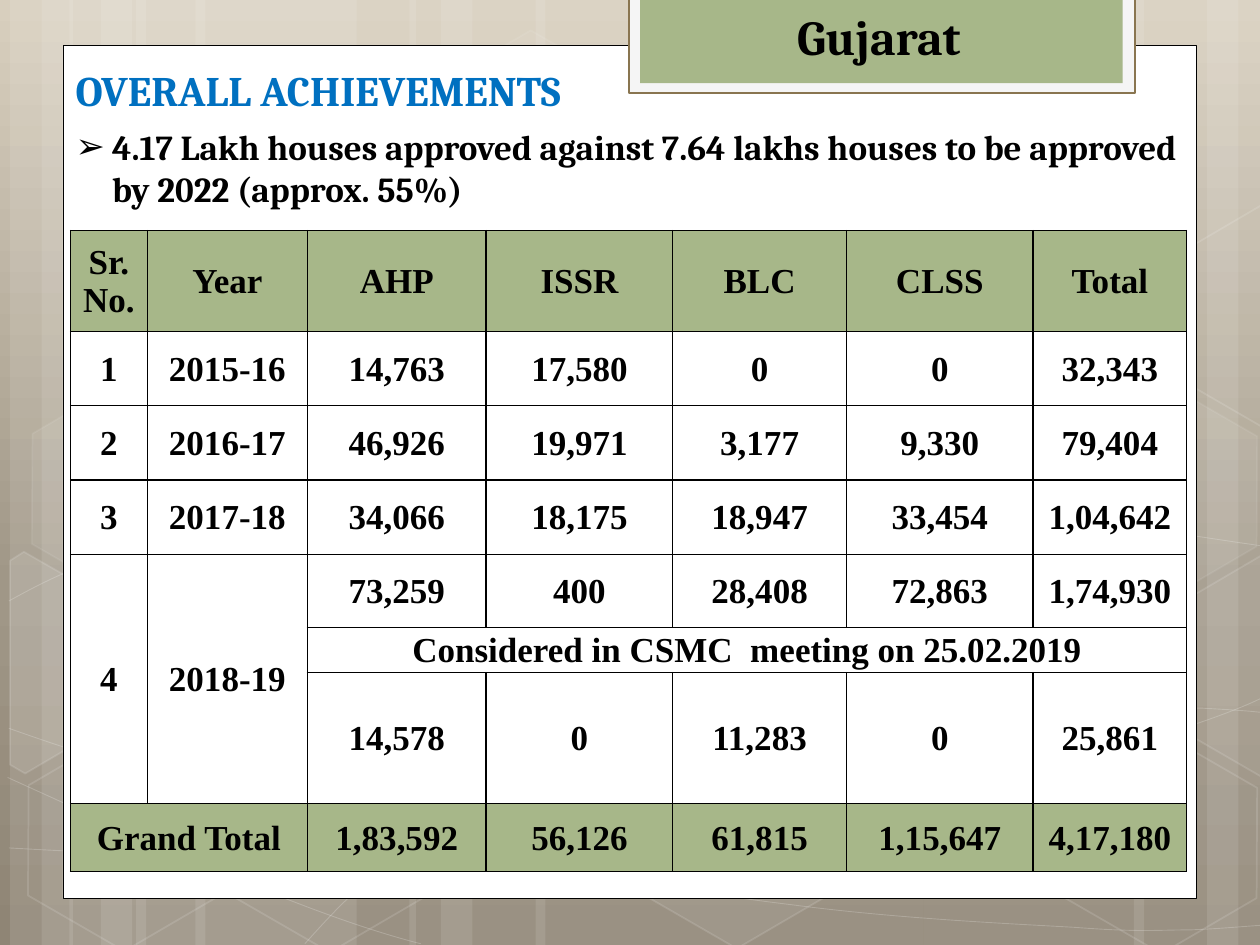
from copy import deepcopy

from lxml import etree
from pptx import Presentation
from pptx.dml.color import RGBColor
from pptx.enum.shapes import MSO_SHAPE as Shape
from pptx.enum.text import MSO_ANCHOR as Anchor, MSO_AUTO_SIZE as AutoSize, PP_ALIGN as Align
from pptx.oxml.ns import qn
from pptx.util import Inches, Pt

WHITE = RGBColor(0xFF, 0xFF, 0xFF)
BLACK = RGBColor(0x00, 0x00, 0x00)
BLUE = RGBColor(0x00, 0x70, 0xC0)
GREEN = RGBColor(0xA7, 0xB7, 0x89)
BROWN = RGBColor(0x89, 0x75, 0x50)
OFF_WHITE = RGBColor(0xF5, 0xF5, 0xF5)
BACKGROUND_STOPS = [
    (0, RGBColor(0xD8, 0xCF, 0xBE)),
    (0.62, RGBColor(0xA0, 0x97, 0x87)),
    (1, RGBColor(0x8F, 0x85, 0x75)),
]


def style(shape, fill=None, line=None, width=1, fill_alpha=100, line_alpha=100):
    """Set fill and line, with opacity in percent; None means no paint."""
    shape.shadow.inherit = False
    for paint, color, alpha in ((shape.fill, fill, fill_alpha), (shape.line.fill, line, line_alpha)):
        if color is None:
            paint.background()
            continue
        paint.solid()
        paint.fore_color.rgb = color
        if alpha < 100:
            solid = shape._element.spPr.find(qn("a:solidFill") if paint is shape.fill
                                             else qn("a:ln") + "/" + qn("a:solidFill"))
            etree.SubElement(solid[0], qn("a:alpha"), val=str(alpha * 1000))
    if line is not None:
        shape.line.width = Pt(width)


def add_outline(points, close):
    builder = slide.shapes.build_freeform(Inches(points[0][0]), Inches(points[0][1]))
    builder.add_line_segments([(Inches(x), Inches(y)) for x, y in points[1:]], close=close)
    return builder.convert_to_shape()


presentation = Presentation()
presentation.slide_width = Inches(10)
presentation.slide_height = Inches(7.5)
slide = presentation.slides.add_slide(presentation.slide_layouts[1])

# Background gradient, light at the top
background_fill = slide.background.fill
background_fill.gradient()
background_fill.gradient_angle = 270
stop_list = slide._element.find(".//" + qn("a:gsLst"))
stop_list.insert(1, deepcopy(stop_list[0]))
for stop, (position, color) in zip(background_fill.gradient_stops, BACKGROUND_STOPS):
    stop.position = position
    stop.color.rgb = color

# Translucent vertical bands: left, width
bands = [
    (1.08, 1.75), (0.08, 0.5), (0.33, 0.83), (1.55, 1.75), (0.55, 0.5), (0.8, 0.83),
    (7.33, 1.75), (9.58, 0.5), (9, 0.83), (4.25, 3.08), (3.25, 0.5), (3.5, 0.83),
]
for left, width in bands:
    band = slide.shapes.add_shape(Shape.RECTANGLE, Inches(left), 0, Inches(width), Inches(7.5))
    style(band, WHITE, fill_alpha=10)

# Sweeping curves: a start point, then three points for each Bezier piece
curves = [
    [(0.07, 6.73), (0.61, 6.76), (1.15, 6.79), (1.9, 6.78), (2.65, 6.77), (3.58, 6.75), (4.58, 6.65),
     (5.58, 6.55), (7, 6.36), (7.92, 6.17), (8.83, 5.98), (9.77, 5.68), (10.07, 5.51)],
    [(0.07, 4.77), (0.36, 4.61), (0.65, 4.46), (1.21, 4.31), (1.78, 4.16), (2.59, 3.94), (3.47, 3.87),
     (4.36, 3.8), (5.44, 3.79), (6.54, 3.87), (7.64, 3.95), (9.47, 4.26), (10.07, 4.34)],
    [(0.06, 6.17), (1.27, 6.72), (2.47, 7.27), (3.34, 7.49)],
    [(0.07, 5.78), (0.38, 5.89), (0.7, 6), (1.28, 6.16), (1.86, 6.31), (2.73, 6.56), (3.57, 6.73),
     (4.4, 6.9), (5.45, 7.08), (6.28, 7.18), (7.11, 7.29), (8, 7.33), (8.53, 7.36),
     (9.05, 7.4), (9.19, 7.38), (9.45, 7.38), (9.71, 7.37), (9.89, 7.35), (10.07, 7.34)],
    [(2.42, 7.49), (2.6, 7.29), (2.78, 7.09), (3.02, 6.91), (3.26, 6.73), (3.6, 6.53), (3.88, 6.39),
     (4.16, 6.25), (4.33, 6.19), (4.7, 6.09), (5.06, 5.99), (5.73, 5.85), (6.08, 5.78),
     (6.44, 5.71), (6.49, 5.71), (6.8, 5.69), (7.11, 5.66), (7.6, 5.63), (7.94, 5.62),
     (8.29, 5.61), (8.86, 5.62), (8.86, 5.62), (9.08, 5.62), (9.31, 5.62), (9.53, 5.62),
     (9.71, 5.63), (9.88, 5.64), (9.97, 5.65), (10.06, 5.66), (10.03, 5.65), (10.06, 5.66)],
]
for points in curves:
    curve = add_outline(points, close=False)
    outline = curve._element.find(".//" + qn("a:path"))
    segments = outline.findall(qn("a:lnTo"))
    for start in range(0, len(segments), 3):
        bezier = etree.SubElement(outline, qn("a:cubicBezTo"))
        for segment in segments[start:start + 3]:
            bezier.append(segment[0])
            outline.remove(segment)
    style(curve, line=WHITE, width=0.5, line_alpha=20)

# Hexagons: left, top, fill opacity (0 for none), line opacity
hexagons = [
    (3.34, 0.36, 4, 8), (4.97, 5.89, 6, 12), (0.11, 5.91, 0, 12), (0.14, 3.12, 7, 8),
    (1.74, 5.92, 0, 12), (8.34, 5.93, 0, 12), (8.34, 3.14, 7, 8),
]
for left, top, fill_alpha, line_alpha in hexagons:
    hexagon = slide.shapes.add_shape(Shape.HEXAGON, Inches(left), Inches(top), Inches(1.75), Inches(1.52))
    hexagon.adjustments[0] = 0.285
    hexagon.rotation = 30
    style(hexagon, WHITE if fill_alpha else None, WHITE, 1, fill_alpha, line_alpha)

# Hexagons cut off by the slide edges
cut_hexagons = [
    ([(0.08, 4.45), (0.19, 4.38), (0.96, 4.82), (0.95, 5.7), (0.2, 6.14), (0.08, 6.07)], 10),
    ([(9.26, 4.85), (10.01, 4.41), (10.09, 4.46), (10.09, 6.13), (10.02, 6.17), (9.26, 5.73)], 4),
    ([(9.26, 2.07), (10.01, 1.63), (10.1, 1.68), (10.09, 3.35), (10.02, 3.39), (9.26, 2.95)], 0),
]
for points, fill_alpha in cut_hexagons:
    style(add_outline(points, close=True), WHITE if fill_alpha else None, WHITE, 1, fill_alpha, 12)

# White panel and the framed title tab
panels = [
    (0.5, 0.36, 9, 6.77, WHITE, BLACK, 0.5),
    (4.99, -0.02, 4.02, 0.76, OFF_WHITE, BROWN, 1.25),
    (5.08, -0.02, 3.83, 0.68, GREEN, None, 0),
]
for left, top, width, height, fill, line, line_width in panels:
    panel = slide.shapes.add_shape(Shape.RECTANGLE, Inches(left), Inches(top), Inches(width), Inches(height))
    style(panel, fill, line, line_width)

# Title and list; each is brought in front of the panels
title, body = slide.placeholders
title.text_frame.text = "Gujarat"
body.text_frame.text = (
    "OVERALL ACHIEVEMENTS\n"
    "4.17 Lakh houses approved against 7.64 lakhs houses to be approved by 2022 (approx. 55%)"
)
heading, bullet = body.text_frame.paragraphs
for placeholder, left, top, width, height in ((title, 6.2, 0, 1.55, 0.57), (body, 0, 0.46, 9.5, 1.26)):
    slide.shapes._spTree.append(placeholder._element)
    placeholder.left, placeholder.top = Inches(left), Inches(top)
    placeholder.width, placeholder.height = Inches(width), Inches(height)
    placeholder.text_frame.auto_size = AutoSize.NONE
    placeholder.text_frame.vertical_anchor = Anchor.MIDDLE
title.text_frame.word_wrap = False
for paragraph, size, color in ((title.text_frame.paragraphs[0], 28, BLACK), (heading, 24, BLUE), (bullet, 20, BLACK)):
    font = paragraph.runs[0].font
    font.name, font.size, font.bold = "Cambria", Pt(size), True
    font.color.rgb = color
for paragraph, margin, indent, mark in ((heading, 0.5, 0, None), (bullet, 0.79, -0.29, "➢")):
    paragraph.space_before, paragraph.space_after = Pt(0), Pt(6)
    properties = paragraph._p.get_or_add_pPr()
    properties.set("marL", str(Inches(margin)))
    properties.set("indent", str(Inches(indent)))
    if mark:
        etree.SubElement(properties, qn("a:buChar"), char=mark)
    else:
        etree.SubElement(properties, qn("a:buNone"))

# Table of houses by year and scheme
rows = [
    ["Sr.\nNo.", "Year", "AHP", "ISSR", "BLC", "CLSS", "Total"],
    ["1", "2015-16", "14,763", "17,580", "0", "0", "32,343"],
    ["2", "2016-17", "46,926", "19,971", "3,177", "9,330", "79,404"],
    ["3", "2017-18", "34,066", "18,175", "18,947", "33,454", "1,04,642"],
    ["4", "2018-19", "73,259", "400", "28,408", "72,863", "1,74,930"],
    ["", "", "Considered in CSMC  meeting on 25.02.2019", "", "", "", ""],
    ["", "", "14,578", "0", "11,283", "0", "25,861"],
    ["Grand Total", "", "1,83,592", "56,126", "61,815", "1,15,647", "4,17,180"],
]
column_widths = [0.61, 1.27, 1.42, 1.48, 1.38, 1.48, 1.22]
row_heights = [0.8, 0.59, 0.59, 0.59, 0.58, 0.36, 1.04, 0.54]
table = slide.shapes.add_table(len(rows), len(column_widths), Inches(0.56), Inches(1.83),
                               Inches(8.86), Inches(5.09)).table
for column, width in zip(table.columns, column_widths):
    column.width = Inches(width)
for row, height in zip(table.rows, row_heights):
    row.height = Inches(height)
for row_index, texts in enumerate(rows):
    for column_index, text in enumerate(texts):
        cell = table.cell(row_index, column_index)
        cell.text_frame.text = text
        cell.vertical_anchor = Anchor.MIDDLE
        cell.margin_left = cell.margin_right = cell.margin_top = Inches(0.01)
        cell.margin_bottom = 0
        for paragraph in cell.text_frame.paragraphs:
            paragraph.alignment = Align.CENTER
            for run in paragraph.runs:
                run.font.name, run.font.size, run.font.bold = "Times New Roman", Pt(20), True
                run.font.color.rgb = BLACK
        for side in ("a:lnL", "a:lnR", "a:lnT", "a:lnB"):
            border = etree.SubElement(cell._tc.get_or_add_tcPr(), qn(side), w=str(Pt(1)))
            solid = etree.SubElement(border, qn("a:solidFill"))
            etree.SubElement(solid, qn("a:srgbClr"), val=str(BLACK))
        if row_index in (5, 6) and 2 <= column_index <= 5:
            cell.fill.background()
        else:
            cell.fill.solid()
            cell.fill.fore_color.rgb = GREEN if row_index in (0, len(rows) - 1) else WHITE
for first, last in (((4, 0), (6, 0)), ((4, 1), (6, 1)), ((5, 2), (5, 6)), ((7, 0), (7, 1))):
    table.cell(*first).merge(table.cell(*last))

presentation.save("out.pptx")
